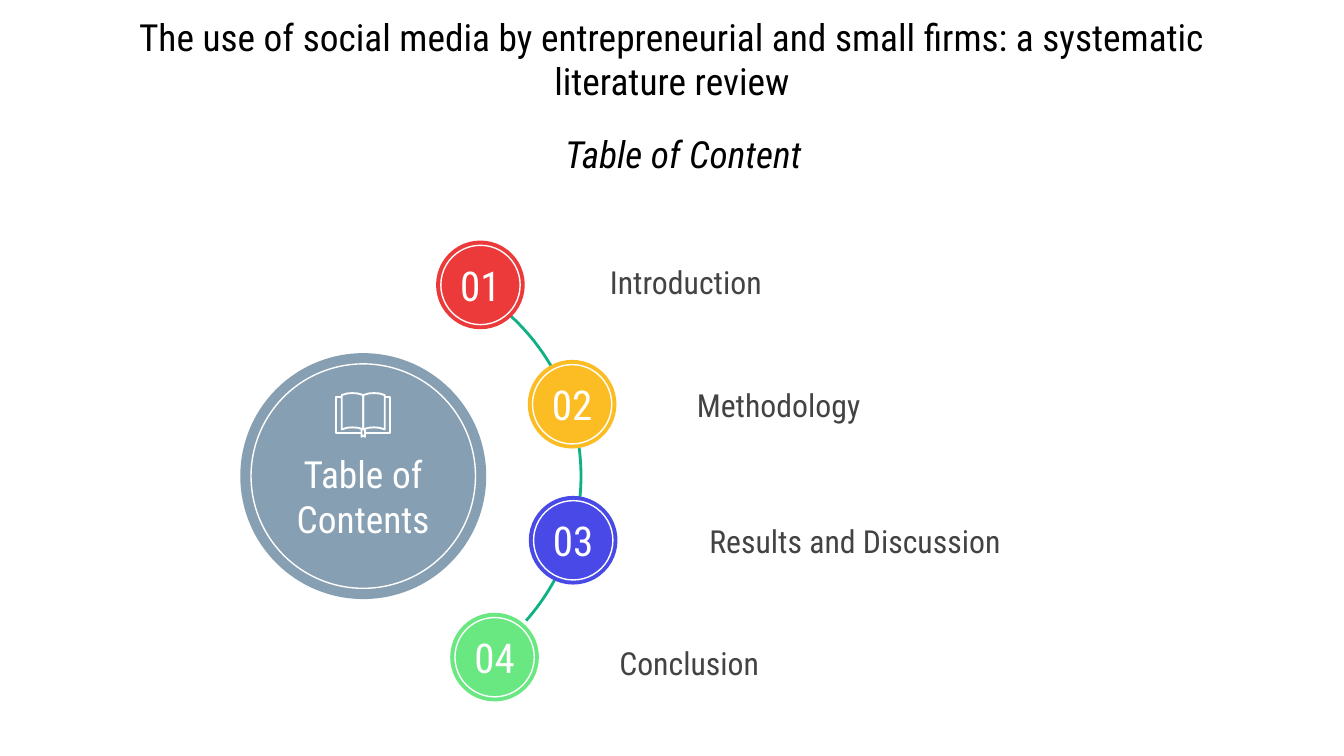
import pptx
import pptx.dml.color
import pptx.enum.shapes
import pptx.enum.text
import pptx.util

RGBColor = pptx.dml.color.RGBColor
SHAPE = pptx.enum.shapes.MSO_SHAPE
ALIGN = pptx.enum.text.PP_ALIGN

FONT = "Roboto Condensed"
BLACK = RGBColor(0x00, 0x00, 0x00)
WHITE = RGBColor(0xFF, 0xFF, 0xFF)
GRAY = RGBColor(0x43, 0x43, 0x43)
SLATE = RGBColor(0x86, 0x9F, 0xB2)
GREEN = RGBColor(0x0E, 0xB1, 0x84)
RED = RGBColor(0xEC, 0x3A, 0x3B)
YELLOW = RGBColor(0xFC, 0xBD, 0x24)
BLUE = RGBColor(0x49, 0x49, 0xE7)
LIME = RGBColor(0x69, 0xE7, 0x81)

# The 16:9 slide is a grid of 100 columns by 56.25 rows of square cells.
COLUMNS, ROWS = 100, 56.25
HUB = (27.03, 35.43)
ARC_START, ARC_END = 305, 41.6
ANGLE_SCALE = 0.6  # degrees to adjustment units

# number, label, colour, badge centre, left and top of the label
SECTIONS = [
    ("01", "Introduction", RED, (35.75, 21.2), (44.4, 19)),
    ("02", "Methodology", YELLOW, (42.57, 30.08), (50.87, 28.1)),
    ("03", "Results and Discussion", BLUE, (42.65, 40.2), (51.8, 38.25)),
    ("04", "Conclusion", LIME, (36.8, 48.9), (45.1, 47.35)),
]


def grid(cells):
    return pptx.util.Inches(cells / 10)


def box(left, top, width, height):
    return [grid(value) for value in (left, top, width, height)]


def centered_box(center, diameter):
    return box(center[0] - diameter / 2, center[1] - diameter / 2, diameter, diameter)


def write_text(shape, text, *, size, color, align=ALIGN.LEFT, italic=False,
               margin=1, top_margin=None, wrap=True):
    frame = shape.text_frame
    frame.auto_size = pptx.enum.text.MSO_AUTO_SIZE.NONE
    frame.word_wrap = wrap
    frame.vertical_anchor = pptx.enum.text.MSO_ANCHOR.MIDDLE
    frame.margin_left = frame.margin_right = frame.margin_bottom = grid(margin)
    frame.margin_top = grid(margin if top_margin is None else top_margin)
    paragraph = frame.paragraphs[0]
    paragraph.text = text
    paragraph.alignment = align
    for run in paragraph.runs:
        run.font.name = FONT
        run.font.size = pptx.util.Pt(size)
        run.font.italic = italic
        run.font.color.rgb = color


def paint(shape, fill=None, line=None, width=0.75):
    shape.shadow.inherit = False
    if fill is None:
        shape.fill.background()
    else:
        shape.fill.solid()
        shape.fill.fore_color.rgb = fill
    if line is None:
        shape.line.fill.background()
    else:
        shape.line.color.rgb = line
        shape.line.width = pptx.util.Pt(width)


def add_ringed_disc(slide, center, diameter, ring_diameter, color, text, **text_format):
    """Add a filled disc with a thin white ring inside that carries the text."""
    disc = slide.shapes.add_shape(SHAPE.OVAL, *centered_box(center, diameter))
    paint(disc, fill=color)
    ring = slide.shapes.add_shape(SHAPE.OVAL, *centered_box(center, ring_diameter))
    paint(ring, line=WHITE)
    write_text(ring, text, color=WHITE, align=ALIGN.CENTER, margin=0, wrap=False,
               **text_format)


def add_text_box(slide, place, text, **text_format):
    write_text(slide.shapes.add_textbox(*box(*place)), text, **text_format)


def add_arc(slide):
    arc = slide.shapes.add_shape(SHAPE.ARC, *centered_box(HUB, 32.4))
    arc.adjustments[0] = ARC_START * ANGLE_SCALE
    arc.adjustments[1] = ARC_END * ANGLE_SCALE
    paint(arc, line=GREEN, width=1.5)


def add_book(slide):
    """Draw an open book: two pages, the cover behind them and a bookmark."""
    center = HUB[0]
    page = [(0, 29.4), (0.4, 29.28), (0.8, 29.25), (1.2, 29.28), (1.6, 29.4),
            (1.6, 31.95), (1.2, 31.83), (0.8, 31.8), (0.4, 31.83), (0, 31.95)]
    cover = [(1.6, 29.55), (2, 29.55), (2, 32.25), (0.2, 32.25)]
    bookmark = [(-0.13, 32), (-0.13, 32.5), (0, 32.4), (0.13, 32.5), (0.13, 32)]
    contours = [(bookmark, False)]
    for side in (-1, 1):
        for points, closed in ((page, True), (cover, False)):
            contours.append(([(side * x, y) for x, y in points], closed))

    builder = None
    for points, closed in contours:
        points = [(grid(center + x), grid(y)) for x, y in points]
        if builder is None:
            builder = slide.shapes.build_freeform(*points[0])
        else:
            builder.move_to(*points[0])
        builder.add_line_segments(points[1:], close=closed)
    paint(builder.convert_to_shape(), line=WHITE, width=1)


def add_title(slide):
    title = slide.shapes.title
    title.left, title.top, title.width, title.height = box(7.75, 1.7, 84.5, 5.3)
    write_text(title, "The use of social media by entrepreneurial and small firms: "
               "a systematic literature review",
               size=20, color=BLACK, align=ALIGN.CENTER)


def main():
    presentation = pptx.Presentation()
    presentation.slide_width = grid(COLUMNS)
    presentation.slide_height = grid(ROWS)
    slide = presentation.slides.add_slide(presentation.slide_layouts[5])

    add_arc(slide)
    add_ringed_disc(slide, HUB, 18.3, 16.7, SLATE, "Table of\nContents",
                    size=20, top_margin=3)
    add_book(slide)
    add_title(slide)
    for number, label, color, center, corner in SECTIONS:
        add_ringed_disc(slide, center, 6.6, 5.9, color, number, size=22)
        add_text_box(slide, (*corner, 28.4, 4), label, size=17, color=GRAY)
    add_text_box(slide, (8.6, 8.8, 84.5, 5.3), "Table of Content",
                 size=20, color=BLACK, align=ALIGN.CENTER, italic=True)

    presentation.save("out.pptx")


if __name__ == "__main__":
    main()
